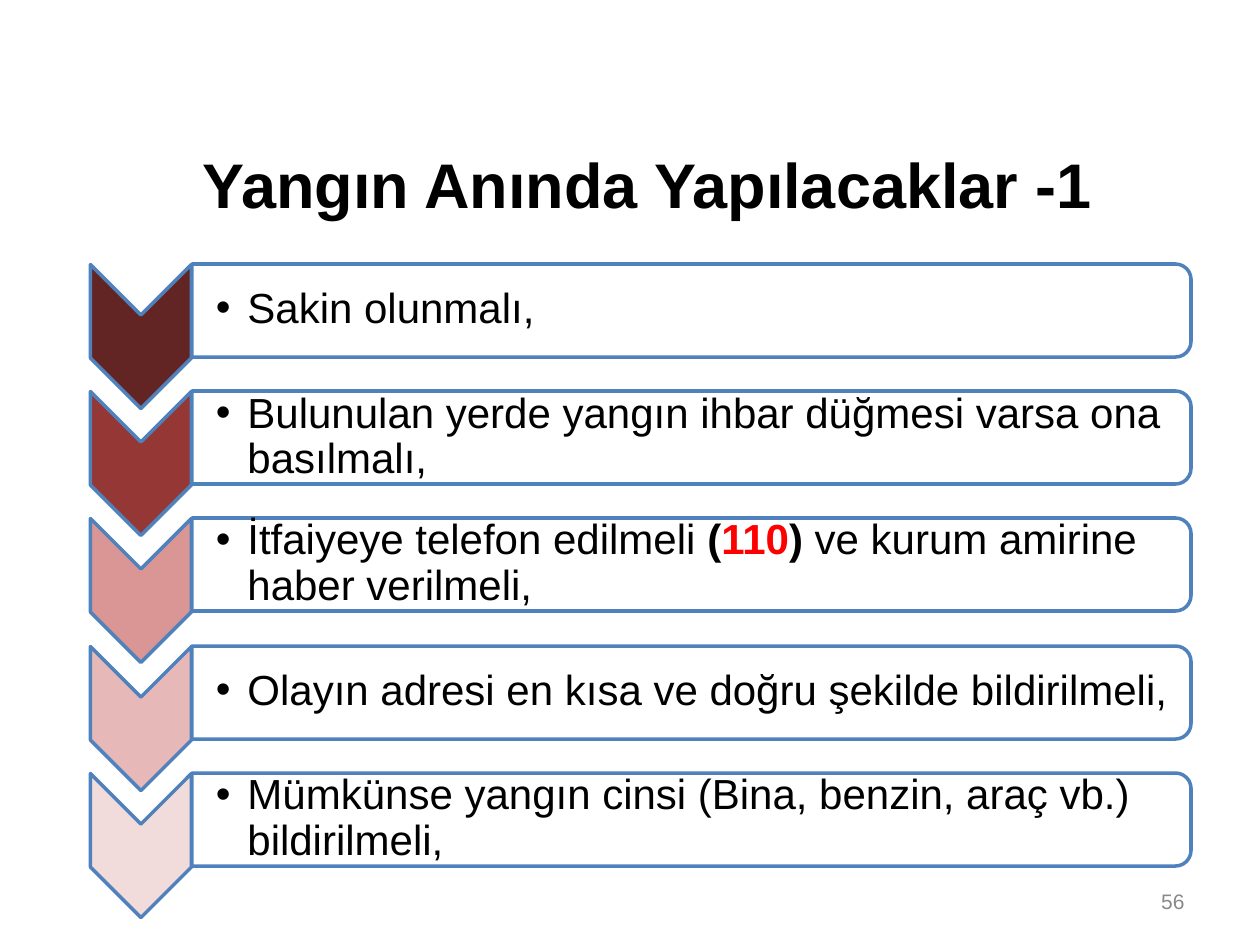
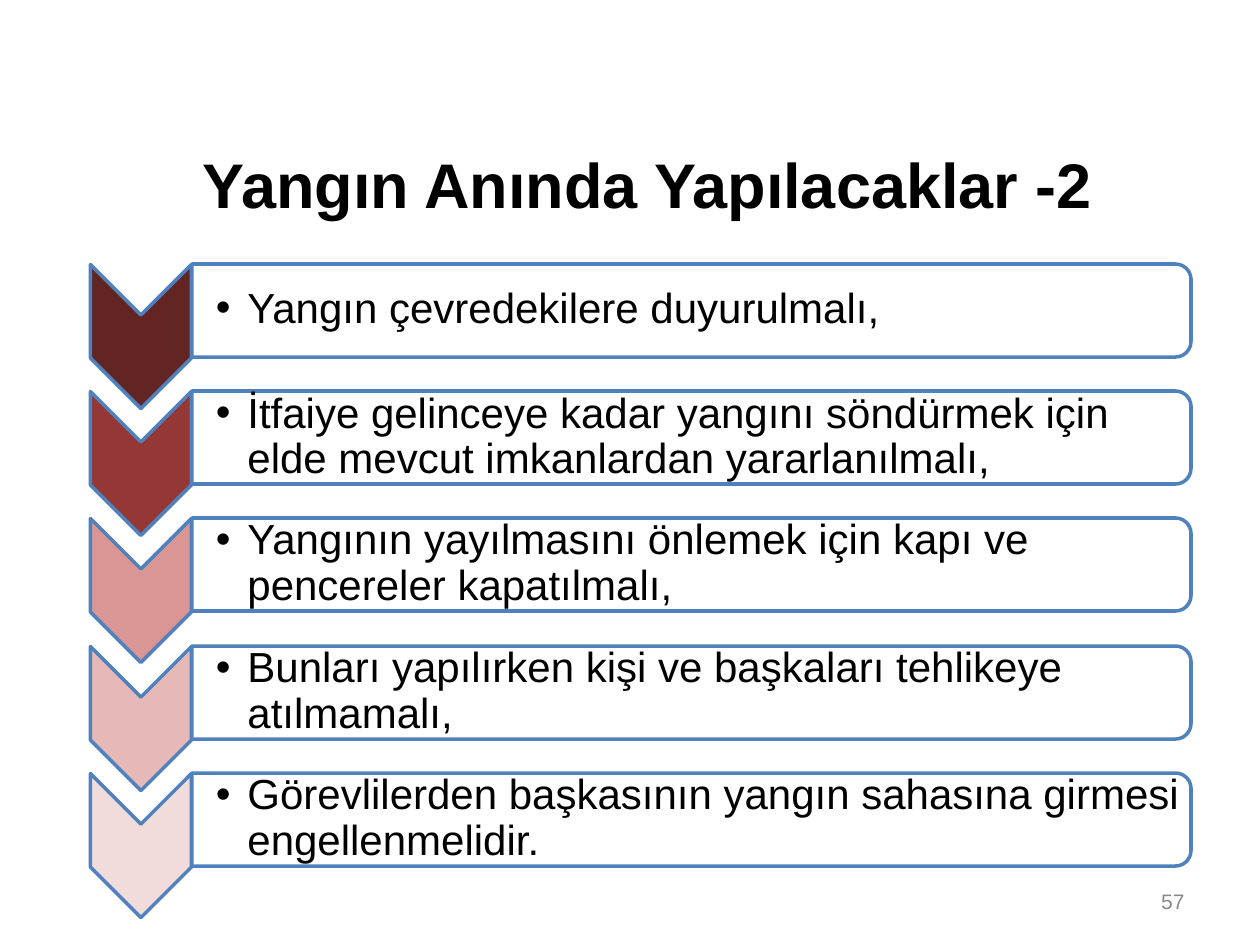
"""Build two slides of fire instructions as lists of chevrons and bars."""
from lxml.etree import SubElement
from pptx import Presentation
from pptx.dml.color import RGBColor
from pptx.enum.shapes import MSO_SHAPE
from pptx.enum.text import MSO_ANCHOR, MSO_AUTO_SIZE, PP_ALIGN
from pptx.oxml.ns import qn
from pptx.util import Pt

SCALE = 914400 / 126
FONT = "Arial"
BLACK, RED, GREY, WHITE, BLUE = "000000", "FF0000", "898989", "FFFFFF", "4F81BD"
CHEVRONS = ["632523", "953735", "D99694", "E6B9B8", "F2DCDB"]
TOP, STEP = 264, 127.25

SLIDES = [
    ("Yangın Anında Yapılacaklar -1", [
        [("Sakin olunmalı,", BLACK, False)],
        [("Bulunulan yerde yangın ihbar düğmesi varsa ona basılmalı,", BLACK, False)],
        [("İtfaiyeye telefon edilmeli ", BLACK, False), ("(", BLACK, True),
         ("110", RED, True), (")", BLACK, True),
         (" ve kurum amirine haber verilmeli,", BLACK, False)],
        [("Olayın adresi en kısa ve doğru şekilde bildirilmeli,", BLACK, False)],
        [("Mümkünse yangın cinsi (Bina, benzin, araç vb.) bildirilmeli,", BLACK, False)],
    ]),
    ("Yangın Anında Yapılacaklar -2", [
        [("Yangın çevredekilere duyurulmalı,", BLACK, False)],
        [("İtfaiye gelinceye kadar yangını söndürmek için elde mevcut imkanlardan "
          "yararlanılmalı,", BLACK, False)],
        [("Yangının yayılmasını önlemek için kapı ve pencereler kapatılmalı,", BLACK, False)],
        [("Bunları yapılırken kişi ve başkaları tehlikeye atılmamalı,", BLACK, False)],
        [("Görevlilerden başkasının yangın sahasına girmesi engellenmelidir.", BLACK, False)],
    ]),
]


def px(*lengths):
    """Turn px into EMU."""
    return [round(n * SCALE) for n in lengths]


def write(sp, runs, size, frame, para):
    """Fill a text shape with one formatted paragraph and return it."""
    tf = sp.text_frame
    p = tf.paragraphs[0]
    frame = {"word_wrap": True, "auto_size": MSO_AUTO_SIZE.NONE, **frame}
    for obj, values in ((tf, frame), (p, para)):
        for name, value in values.items():
            setattr(obj, name, value)
    for text, color, bold in runs:
        r = p.add_run()
        r.text = text
        for name, value in {"name": FONT, "size": Pt(size), "bold": bold}.items():
            setattr(r.font, name, value)
        r.font.color.rgb = RGBColor.from_string(color)
    return p


prs = Presentation()
prs.slide_width, prs.slide_height = px(1260, 945)
left, edge = px(24, 2)
item_frame = {"vertical_anchor": MSO_ANCHOR.MIDDLE, "margin_left": left,
              "margin_right": edge, "margin_top": edge, "margin_bottom": edge}

for number, (heading, items) in enumerate(SLIDES, 56):
    s = prs.slides.add_slide(prs.slide_layouts[5])
    title = s.shapes.title
    title.left, title.top, title.width, title.height = px(88, 139, 1103, 86)
    write(title, [(" " + heading, BLACK, True)], 36,
          {"vertical_anchor": MSO_ANCHOR.TOP}, {"alignment": PP_ALIGN.CENTER})

    for i, (runs, color) in enumerate(zip(items, CHEVRONS)):
        y = TOP + round(i * STEP)
        chevron = s.shapes.add_shape(MSO_SHAPE.CHEVRON, *px(69, y + 22, 144, 101))
        bar = s.shapes.add_shape(MSO_SHAPE.ROUND_2_SAME_RECTANGLE,
                                 *px(645, y - 453, 93, 999))
        for sp, fill in ((chevron, color), (bar, WHITE)):
            sp.rotation = 90
            sp.shadow.inherit = False
            sp.fill.solid()
            sp.fill.fore_color.rgb = RGBColor.from_string(fill)
            sp.line.color.rgb = RGBColor.from_string(BLUE)
            sp.line.width = Pt(2)
        clr = bar.fill._xPr.find(qn("a:solidFill"))[0]
        SubElement(clr, qn("a:alpha"), val="90000")

        box = s.shapes.add_textbox(*px(192, y + 4, 995, 84))
        p = write(box, runs, 24, item_frame, {"line_spacing": 0.9})
        pPr = p._p.get_or_add_pPr()
        for name, value in {"marL": "228600", "indent": "-228600"}.items():
            pPr.set(name, value)
        SubElement(pPr, qn("a:buFont"), typeface=FONT)
        SubElement(pPr, qn("a:buChar"), char="•")

    box = s.shapes.add_textbox(*px(903, 876, 294, 50))
    write(box, [(str(number), GREY, False)], 12,
          {"vertical_anchor": MSO_ANCHOR.MIDDLE}, {"alignment": PP_ALIGN.RIGHT})

prs.save("out.pptx")
